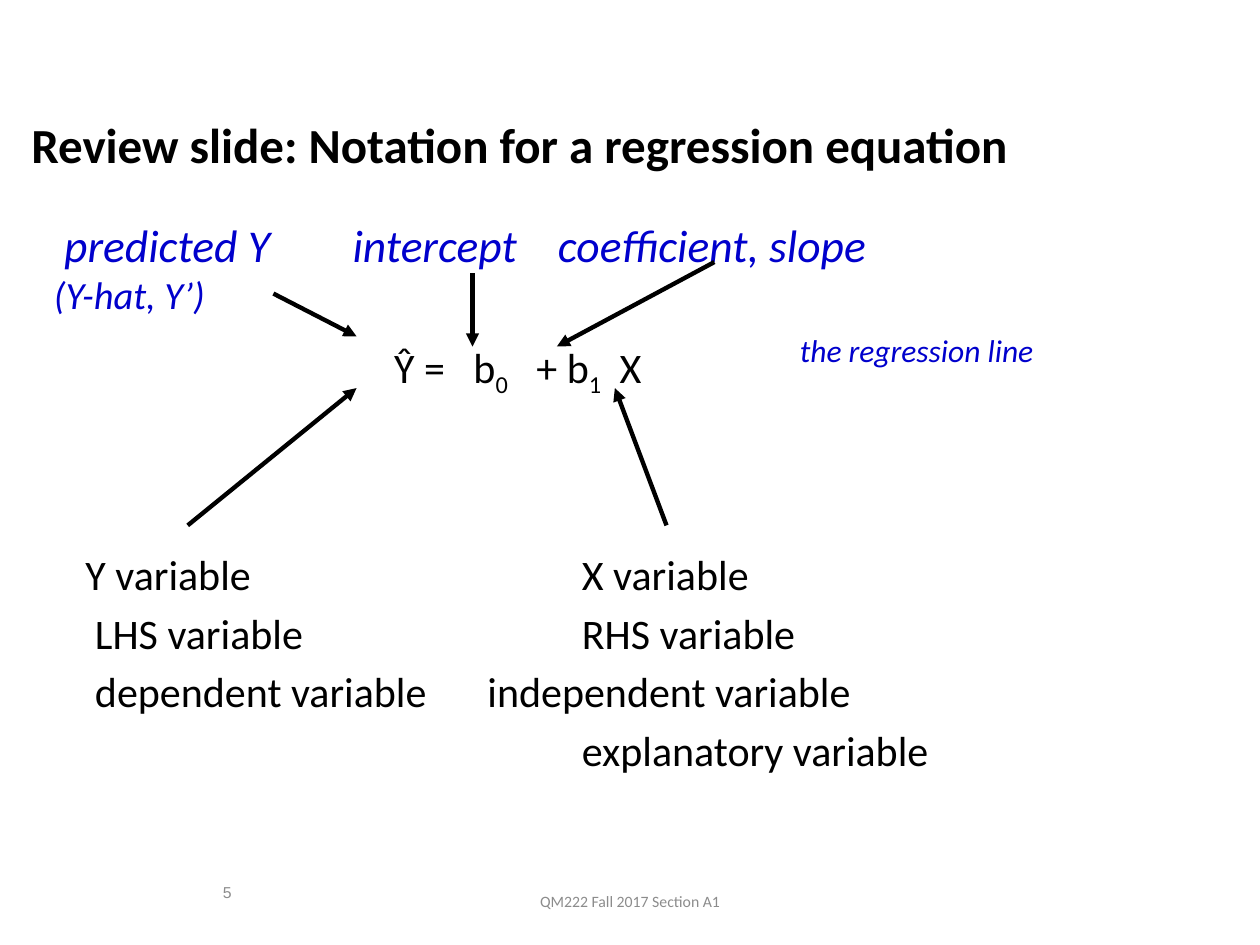
import pptx
import pptx.util
import pptx.oxml
import pptx.oxml.ns
import pptx.dml.color
import pptx.enum.shapes
import pptx.enum.text
import lxml.etree

Inch, Pt = pptx.util.Inches, pptx.util.Pt
Align = pptx.enum.text.PP_ALIGN
Anchor = pptx.enum.text.MSO_ANCHOR
theme = {
    "ink": "000000", "blue": "0000CC", "grey": "8C8C8C",
    "font": "Calibri", "plain": "Arial",
    "title": 28, "label": 26, "body": 24, "sub": 22, "note": 18, "foot": 9,
    "line": 2.5,
}

deck = pptx.Presentation()
deck.slide_width, deck.slide_height = Inch(10), Inch(7.5)
slide = deck.slides.add_slide(deck.slide_layouts[6])


def add_text(box, lines, size, tint="ink", font="font", tabs=(), anchor=Anchor.TOP):
    """Add a text box with one paragraph per line and left tab stops."""
    frame = slide.shapes.add_textbox(*map(Inch, box)).text_frame
    frame.word_wrap = True
    frame.vertical_anchor = anchor
    for i, line in enumerate(lines):
        para = frame.paragraphs[0] if i == 0 else frame.add_paragraph()
        para.font.size = Pt(theme[size])
        para.font.name = theme[font]
        para.font.color.rgb = pptx.dml.color.RGBColor.from_string(theme[tint])
        para.add_run().text = line
        if tabs:
            stops = pptx.oxml.parse_xml(
                "<a:tabLst %s>%s</a:tabLst>" % (
                    pptx.oxml.ns.nsdecls("a"),
                    "".join('<a:tab pos="%d" algn="l"/>' % Inch(x) for x in tabs)))
            para._p.get_or_add_pPr().insert(0, stops)
    return frame.paragraphs


# Title
title = add_text((0.15, 0.67, 9.75, 1),
                 ["Review slide: Notation for a regression equation"],
                 "title", anchor=Anchor.MIDDLE)[0]
title.font.bold = True
title.line_spacing = 0.9

# Names of the terms, above the equation
names = add_text((0.33, 1.67, 7.5, 0.97),
                 [" predicted Y\tintercept\tcoefficient, slope", "(Y-hat, Y’)"],
                 "label", "blue", tabs=(2.37, 4))
names[1].font.size = Pt(theme["sub"])
note = add_text((6.25, 2.58, 2.93, 0.5), ["the regression line"], "note", "blue")
for para in (*names, *note):
    para.font.italic = True

# Equation, with subscripts
sum_line = add_text((3.03, 2.66, 3, 0.5), ["Ŷ =\tb"], "body",
                    tabs=(0.63, 1.13, 1.79))[0]
for part in ("0", "\t+ b", "1", "\tX"):
    run = sum_line.add_run()
    run.text = part
    if part.isdigit():
        run.font._element.set("baseline", "-25000")

# Other words for Y (left) and X (right)
terms = add_text((0.58, 4.35, 8.89, 2.15),
                 ["Y variable\t\tX variable", " LHS variable\t\tRHS variable",
                  " dependent variable\tindependent variable",
                  "\t\texplanatory variable"],
                 "body", tabs=(3.19, 3.94))
for para in terms:
    para.line_spacing = 0.9
    para.space_after = Pt(7.5)

# Arrows from each name to its term
for x1, y1, x2, y2 in ((1.49, 4.17, 2.83, 3.08), (3.75, 2.17, 3.75, 2.75),
                       (5.67, 2.08, 4.42, 2.75), (2.17, 2.33, 2.83, 2.67),
                       (5.29, 4.17, 4.88, 3.08)):
    arrow = slide.shapes.add_connector(
        pptx.enum.shapes.MSO_CONNECTOR.STRAIGHT, *map(Inch, (x1, y1, x2, y2)))
    arrow.line.width = Pt(theme["line"])
    arrow.line.color.rgb = pptx.dml.color.RGBColor.from_string(theme["ink"])
    tail = lxml.etree.SubElement(arrow.line._get_or_add_ln(),
                                 pptx.oxml.ns.qn("a:tailEnd"))
    tail.set("type", "triangle")
    lxml.etree.SubElement(arrow._element.spPr, pptx.oxml.ns.qn("a:effectLst"))

# Page number and footer
add_text((1.67, 6.83, 1.42, 0.5), ["5"], "foot", "grey", "plain",
         anchor=Anchor.MIDDLE)
foot = add_text((3.31, 6.95, 3.38, 0.4), ["QM222 Fall 2017 Section A1"],
                "foot", "grey", anchor=Anchor.MIDDLE)[0]
foot.alignment = Align.CENTER

deck.save("out.pptx")
